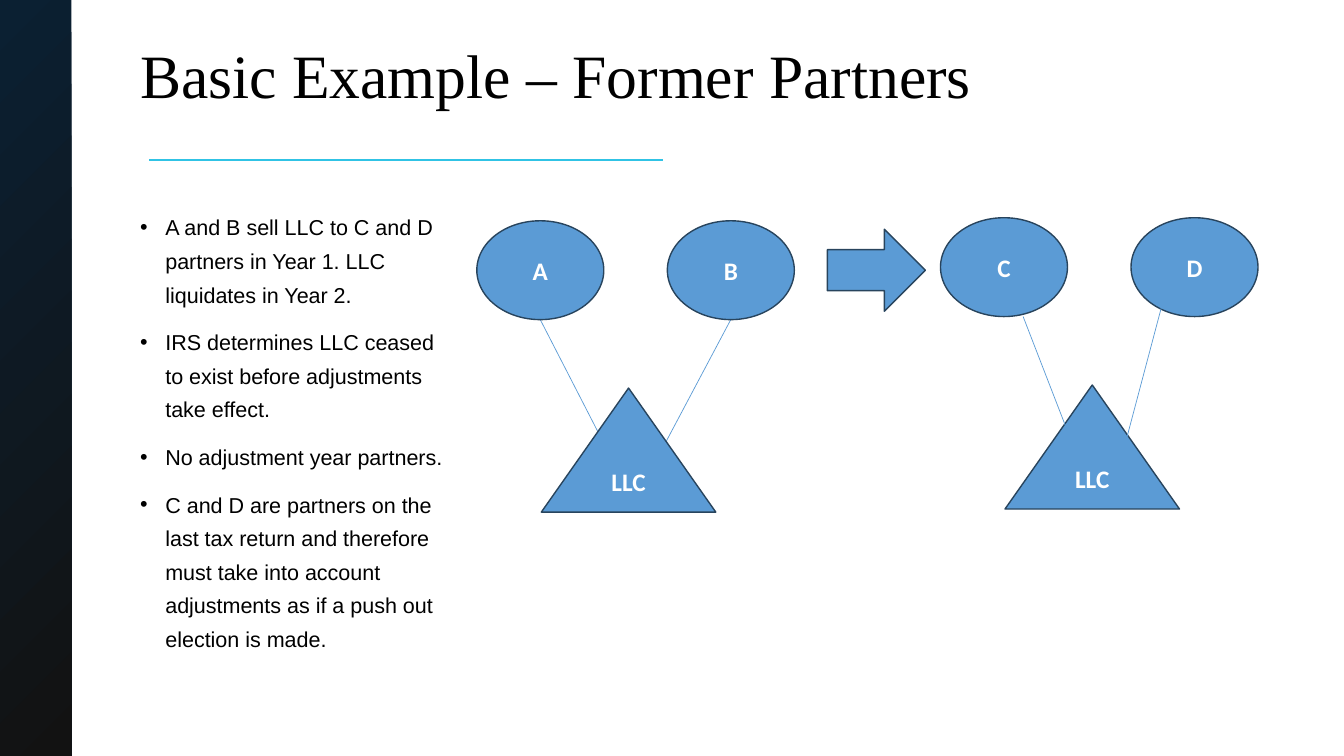
from dataclasses import dataclass

from lxml.etree import SubElement
from pptx import Presentation
from pptx.dml.color import RGBColor
from pptx.enum.shapes import MSO_CONNECTOR as Connector, MSO_SHAPE as Shape
from pptx.enum.text import MSO_ANCHOR as Anchor, PP_ALIGN as Align
from pptx.oxml.ns import qn
from pptx.util import Pt

TITLE = "Basic Example – Former Partners"
BULLETS = [
    "A and B sell LLC to C and D partners in Year 1. LLC liquidates in Year 2.",
    "IRS determines LLC ceased to exist before adjustments take effect.",
    "No adjustment year partners.",
    "C and D are partners on the last tax return and therefore must take into "
    "account adjustments as if a push out election is made.",
]
COMPANY = "LLC"
# Ownership lines are (x1, y1, x2, y2), measured from the group's top left.
BEFORE = {
    "origin": (340.6, 157.7),
    "partners": ("A", "B"),
    "lines": [(181.4, 70.6, 131, 165.6), (45.3, 70.6, 100, 177)],
}
AFTER = {
    "origin": (671.8, 155.5),
    "partners": ("C", "D"),
    "lines": [(59, 70.6, 100, 176.4), (159.1, 59.1, 131, 165)],
}
PARTNER_SIZE = (90.7, 70.6)
PARTNER_PITCH = 136.1
COMPANY_BOX = (46.1, 119.5, 124.6, 88.6)


@dataclass(frozen=True)
class Theme:
    ink: str = "000000"
    fill: str = "5B9BD5"
    outline: str = "28445D"
    label: str = "FFFFFF"
    rule: str = "30C3E5"
    band: tuple = ("0B2032", "121212")
    title_font: str = "Times New Roman"
    body_font: str = "Arial"
    label_font: str = "Calibri"
    title_size: float = 44
    body_size: float = 15.4
    label_size: float = 18


theme = Theme()
rgb = RGBColor.from_string


def add_span(para, text, font, size, color, bold=False):
    span = para.add_run()
    span.text = text
    span.font.name, span.font.size, span.font.bold = font, Pt(size), bold
    span.font.color.rgb = rgb(color)


def add_text_box(page, bounds):
    frame = page.shapes.add_textbox(*map(Pt, bounds)).text_frame
    frame.word_wrap = True
    frame.vertical_anchor = Anchor.TOP
    return frame


def add_line(page, ends, color, width):
    line = page.shapes.add_connector(Connector.STRAIGHT, *map(Pt, ends))
    line.line.color.rgb = rgb(color)
    line.line.width = Pt(width)
    SubElement(line._element.spPr, qn("a:effectLst"))


def add_figure(page, kind, bounds, label=""):
    figure = page.shapes.add_shape(kind, *map(Pt, bounds))
    figure.shadow.inherit = False
    figure.fill.solid()
    figure.fill.fore_color.rgb = rgb(theme.fill)
    figure.line.color.rgb = rgb(theme.outline)
    figure.line.width = Pt(1)
    if label:
        figure.text_frame.vertical_anchor = Anchor.MIDDLE
        para = figure.text_frame.paragraphs[0]
        para.alignment = Align.CENTER
        add_span(para, label, theme.label_font, theme.label_size, theme.label, True)


def add_band(page, height):
    band = page.shapes.add_shape(Shape.RECTANGLE, 0, 0, Pt(51), height)
    band.shadow.inherit = False
    band.line.fill.background()
    band.fill.gradient()
    band.fill.gradient_angle = 315
    for stop, color in zip(band.fill.gradient_stops, theme.band):
        stop.color.rgb = rgb(color)


def add_bullets(page, bounds):
    frame = add_text_box(page, bounds)
    for index, text in enumerate(BULLETS):
        para = frame.add_paragraph() if index else frame.paragraphs[0]
        para.line_spacing = 1.3
        para.space_before = Pt(10 if index else 0)
        props = para._p.get_or_add_pPr()
        props.set("marL", str(Pt(18)))
        props.set("indent", str(-Pt(18)))
        SubElement(props, qn("a:buFont"), typeface=theme.body_font)
        SubElement(props, qn("a:buChar"), char="•")
        add_span(para, text, theme.body_font, theme.body_size, theme.ink)


def add_ownership_lines(page, group):
    left, top = group["origin"]
    for x1, y1, x2, y2 in group["lines"]:
        add_line(page, (left + x1, top + y1, left + x2, top + y2), theme.fill, 0.5)


def add_owners(page, group):
    """Draw the company triangle and its partners' ellipses."""
    left, top = group["origin"]
    x, y, width, height = COMPANY_BOX
    add_figure(page, Shape.ISOSCELES_TRIANGLE, (left + x, top + y, width, height), COMPANY)
    for index, name in enumerate(group["partners"]):
        add_figure(page, Shape.OVAL, (left + index * PARTNER_PITCH, top, *PARTNER_SIZE), name)


def main():
    deck = Presentation()
    deck.slide_width, deck.slide_height = Pt(960), Pt(540)
    page = deck.slides.add_slide(deck.slide_layouts[6])

    add_band(page, deck.slide_height)
    add_line(page, (106.5, 114.3, 473.7, 114.3), theme.rule, 1.5)
    add_ownership_lines(page, BEFORE)

    title = add_text_box(page, (93, 28.8, 828, 104.4)).paragraphs[0]
    title.line_spacing = 0.9
    add_span(title, TITLE, theme.title_font, theme.title_size, theme.ink)
    add_bullets(page, (93, 144, 237, 376))

    add_owners(page, BEFORE)
    add_figure(page, Shape.RIGHT_ARROW, (591, 163.7, 70, 58.6))
    add_owners(page, AFTER)
    add_ownership_lines(page, AFTER)
    deck.save("out.pptx")


if __name__ == "__main__":
    main()
